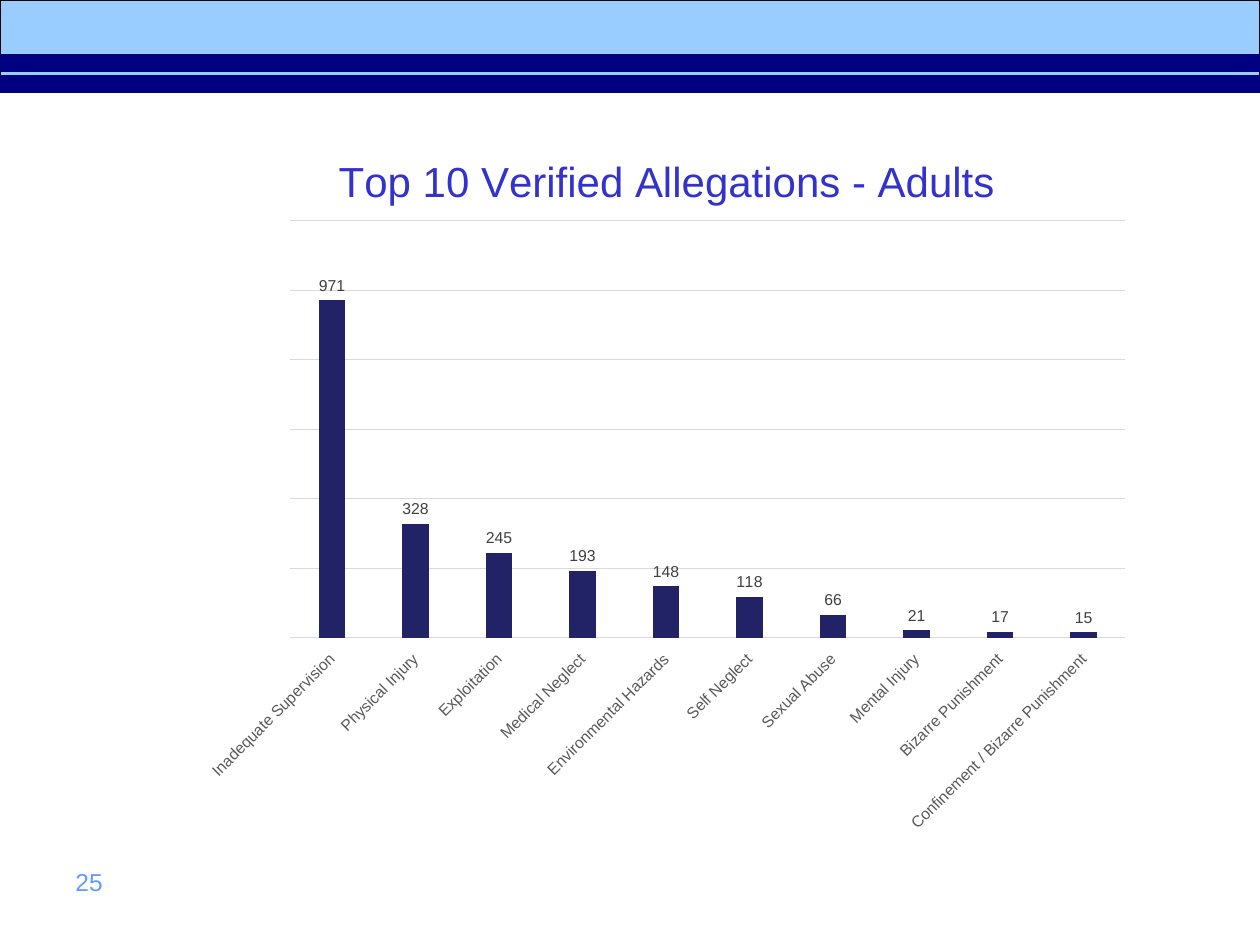
from lxml import etree
from pptx import Presentation
from pptx.chart.data import CategoryChartData
from pptx.dml.color import RGBColor
from pptx.enum.chart import (XL_CHART_TYPE, XL_LABEL_POSITION, XL_TICK_LABEL_POSITION,
                             XL_TICK_MARK)
from pptx.enum.shapes import MSO_CONNECTOR, MSO_SHAPE
from pptx.oxml import parse_xml
from pptx.oxml.ns import nsdecls, qn
from pptx.util import Pt

WHITE = RGBColor(0xFF, 0xFF, 0xFF)
BLACK = RGBColor(0x00, 0x00, 0x00)
SKY = RGBColor(0x99, 0xCC, 0xFF)
NAVY = RGBColor(0x00, 0x00, 0x80)
PAGE_BLUE = RGBColor(0x66, 0x99, 0xFF)
TITLE_BLUE = RGBColor(0x33, 0x33, 0xCC)
BAR = RGBColor(0x22, 0x22, 0x67)
GRID = RGBColor(0xD9, 0xD9, 0xD9)
AXIS_TEXT = RGBColor(0x59, 0x59, 0x59)
LABEL_TEXT = RGBColor(0x40, 0x40, 0x40)

FONT = "Arial"
WIDTH, HEIGHT = 720, 540

ALLEGATIONS = {
    "Inadequate Supervision": 971,
    "Physical Injury": 328,
    "Exploitation": 245,
    "Medical Neglect": 193,
    "Environmental Hazards": 148,
    "Self Neglect": 118,
    "Sexual Abuse": 66,
    "Mental Injury": 21,
    "Bizarre Punishment": 17,
    "Confinement / Bizarre Punishment": 15,
}


def format_font(font, size, color):
    font.name = FONT
    font.size = Pt(size)
    font.bold = False
    font.color.rgb = color


def add_text(tf, text, size=14, color=BLACK):
    r = tf.paragraphs[0].add_run()
    r.text = text
    format_font(r.font, size, color)


def format_line(line, color, width=0.75):
    line.color.rgb = color
    line.width = Pt(width)


def add_band(slide, height):
    sp = slide.shapes.add_shape(MSO_SHAPE.RECTANGLE, 0, 0, Pt(WIDTH), Pt(height))
    sp.shadow.inherit = False
    sp.fill.solid()
    sp.fill.fore_color.rgb = SKY
    format_line(sp.line, BLACK)


def add_rule(slide, y):
    line = slide.shapes.add_connector(MSO_CONNECTOR.STRAIGHT, 0, Pt(y), Pt(WIDTH), Pt(y))
    format_line(line.line, NAVY, 10.25)
    etree.SubElement(line._element.spPr, qn("a:effectLst"))


def add_page_number(slide, text):
    box = slide.shapes.add_textbox(Pt(36), Pt(492), Pt(168), Pt(37.5))
    box.text_frame.word_wrap = True
    add_text(box.text_frame, text, color=PAGE_BLUE)


def place_plot(chart, x, y, w, h):
    """Fix the inner plot area as fractions of the chart."""
    area = chart._chartSpace.chart.plotArea
    for old in area.findall(qn("c:layout")):
        area.remove(old)
    sizes = "".join(f'<c:{tag} val="{val}"/>' for tag, val in zip("xywh", (x, y, w, h)))
    area.insert(0, parse_xml(
        f'<c:layout {nsdecls("c")}><c:manualLayout><c:layoutTarget val="inner"/>'
        f'<c:xMode val="edge"/><c:yMode val="edge"/>{sizes}'
        '</c:manualLayout></c:layout>'))


def add_allegations_chart(slide):
    data = CategoryChartData()
    data.categories = list(ALLEGATIONS)
    data.add_series("Series 1", list(ALLEGATIONS.values()))
    chart = slide.shapes.add_chart(XL_CHART_TYPE.COLUMN_CLUSTERED, Pt(108), Pt(72),
                                   Pt(546), Pt(408), data).chart
    format_font(chart.font, 10, BLACK)
    chart.has_legend = False
    chart.has_title = True
    add_text(chart.chart_title.text_frame, "Top 10 Verified Allegations - Adults",
             size=24, color=TITLE_BLUE)
    place_plot(chart, 0.106, 0.133, 0.874, 0.584)

    # Columns and their values
    plot = chart.plots[0]
    plot.gap_width, plot.overlap = 219, -27
    plot.vary_by_categories = False
    series = plot.series[0]
    series.format.fill.solid()
    series.format.fill.fore_color.rgb = BAR
    labels = series.data_labels
    labels.show_value = True
    labels.position = XL_LABEL_POSITION.OUTSIDE_END
    format_font(labels.font, 9, LABEL_TEXT)

    # Slanted category names
    axis = chart.category_axis
    axis.major_tick_mark = axis.minor_tick_mark = XL_TICK_MARK.NONE
    axis.tick_label_position = XL_TICK_LABEL_POSITION.LOW
    format_line(axis.format.line, GRID)
    format_font(axis.tick_labels.font, 9, AXIS_TEXT)
    axis._element.txPr.bodyPr.set("rot", str(-45 * 60000))

    # Hidden value axis with gridlines
    axis = chart.value_axis
    axis.minimum_scale, axis.maximum_scale, axis.major_unit = 0, 1200, 200
    axis.has_major_gridlines = True
    format_line(axis.major_gridlines.format.line, GRID)
    axis.visible = False


def main():
    prs = Presentation()
    prs.slide_width, prs.slide_height = Pt(WIDTH), Pt(HEIGHT)
    s = prs.slides.add_slide(prs.slide_layouts[6])
    s.background.fill.solid()
    s.background.fill.fore_color.rgb = WHITE

    # Header
    add_band(s, 48)
    for y in (48, 36):
        add_rule(s, y)

    # Content
    add_page_number(s, "25")
    add_allegations_chart(s)
    prs.save("out.pptx")


if __name__ == "__main__":
    main()
